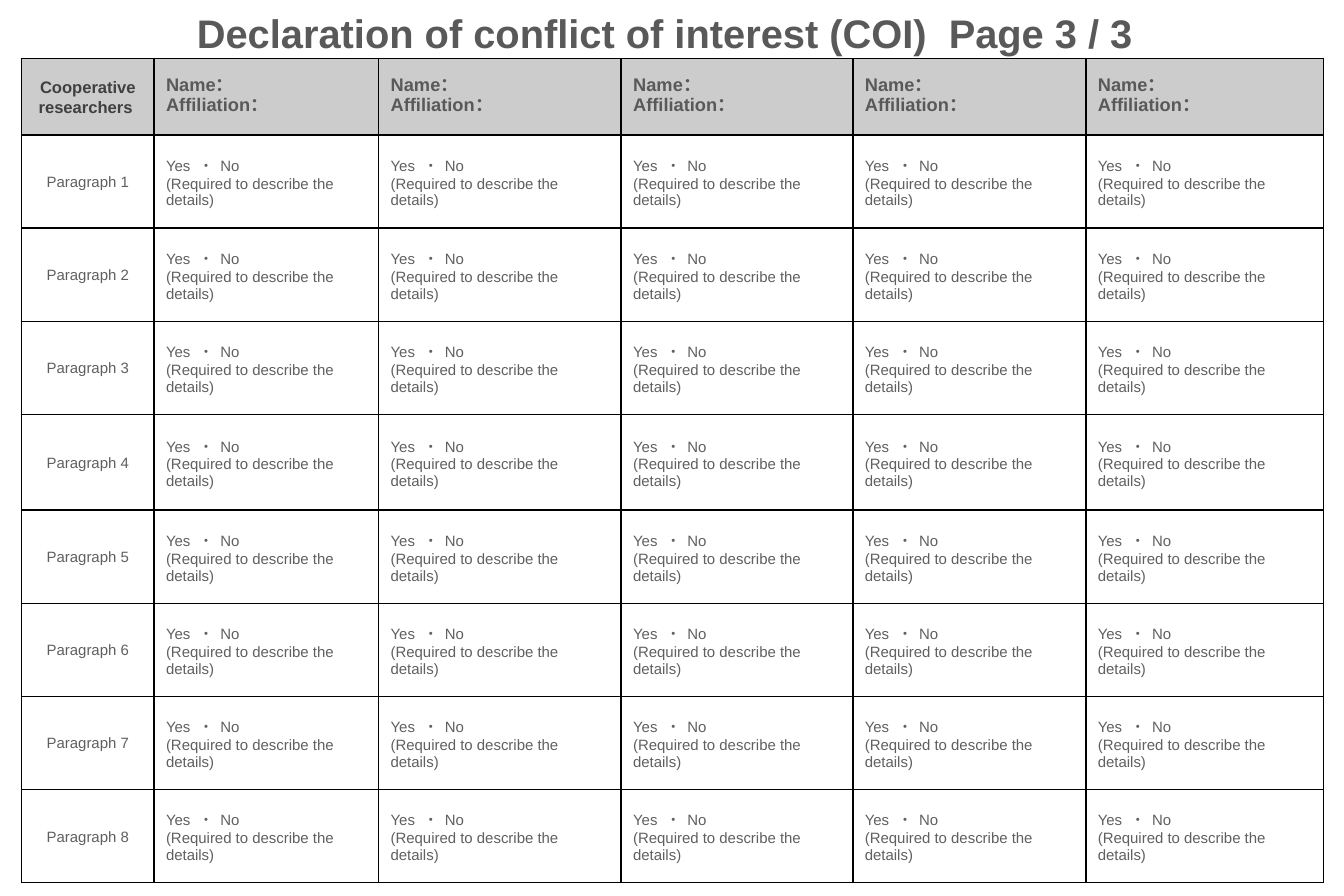
from pptx import Presentation
from pptx.dml.color import RGBColor
from pptx.enum.text import MSO_ANCHOR, PP_ALIGN
from pptx.oxml import parse_xml
from pptx.oxml.ns import nsdecls
from pptx.util import Inches, Pt

TITLE = "Declaration of conflict of interest (COI)  Page 3 / 3"
CORNER = ["Cooperative researchers "]
PERSON = ["Name：", "Affiliation："]
ANSWER = ["Yes  ・  No", "(Required to describe the details)"]
ITEMS = [f"Paragraph {n}" for n in range(1, 9)]

COLS = [1.11, 1.88, 2.03, 1.94, 1.95, 1.99]
ROWS = [0.64] + [0.78] * 3 + [0.8] + [0.78] * 4

FONT = "Arial"
TITLE_GRAY = RGBColor(0x59, 0x59, 0x59)
HEAD_GRAY = RGBColor(0x40, 0x40, 0x40)
BODY_GRAY = RGBColor(0x60, 0x60, 0x60)
HEAD_FILL = RGBColor(0xCC, 0xCC, 0xCC)
WHITE = RGBColor(0xFF, 0xFF, 0xFF)


def write(frame, lines, size, color, bold=False, align=PP_ALIGN.LEFT, space=None):
    """Put each line in its own paragraph of the frame."""
    for i, line in enumerate(lines):
        para = frame.add_paragraph() if i else frame.paragraphs[0]
        para.alignment = align
        if space:
            para.line_spacing = Pt(space)
        run = para.add_run()
        run.text = line
        font = run.font
        font.name, font.size, font.bold = FONT, Pt(size), bold
        font.color.rgb = color


def style(cell, fill):
    """Centre the text vertically, fill the cell and draw its four borders."""
    cell.vertical_anchor = MSO_ANCHOR.MIDDLE
    props = cell._tc.get_or_add_tcPr()
    for side in ("lnL", "lnR", "lnT", "lnB"):
        props.append(parse_xml(
            f'<a:{side} {nsdecls("a")} w="12700"><a:solidFill>'
            f'<a:srgbClr val="000000"/></a:solidFill></a:{side}>'))
    cell.fill.solid()
    cell.fill.fore_color.rgb = fill


deck = Presentation()
deck.slide_width, deck.slide_height = Inches(11.25), Inches(7.5)
slide = deck.slides.add_slide(deck.slide_layouts[6])

title = slide.shapes.add_textbox(Inches(1.51), Inches(0.02), Inches(8.11), Inches(0.5))
title.text_frame.word_wrap = False
title.text_frame.vertical_anchor = MSO_ANCHOR.MIDDLE
write(title.text_frame, [TITLE], 24, TITLE_GRAY, True, PP_ALIGN.CENTER)

table = slide.shapes.add_table(
    len(ROWS), len(COLS), Inches(0.18), Inches(0.49),
    Inches(sum(COLS)), Inches(sum(ROWS))).table
for col, width in zip(table.columns, COLS):
    col.width = Inches(width)
for row, height in zip(table.rows, ROWS):
    row.height = Inches(height)

for r in range(len(ROWS)):
    for c in range(len(COLS)):
        cell = table.cell(r, c)
        style(cell, WHITE if r else HEAD_FILL)
        frame = cell.text_frame
        if r and c:
            write(frame, ANSWER, 9, BODY_GRAY)
        elif r:
            write(frame, [ITEMS[r - 1]], 9, BODY_GRAY, False, PP_ALIGN.CENTER, 11)
        elif c:
            write(frame, PERSON, 11, TITLE_GRAY, True, PP_ALIGN.LEFT, 12)
        else:
            write(frame, CORNER, 10, HEAD_GRAY, True, PP_ALIGN.CENTER, 12)

deck.save("out.pptx")
